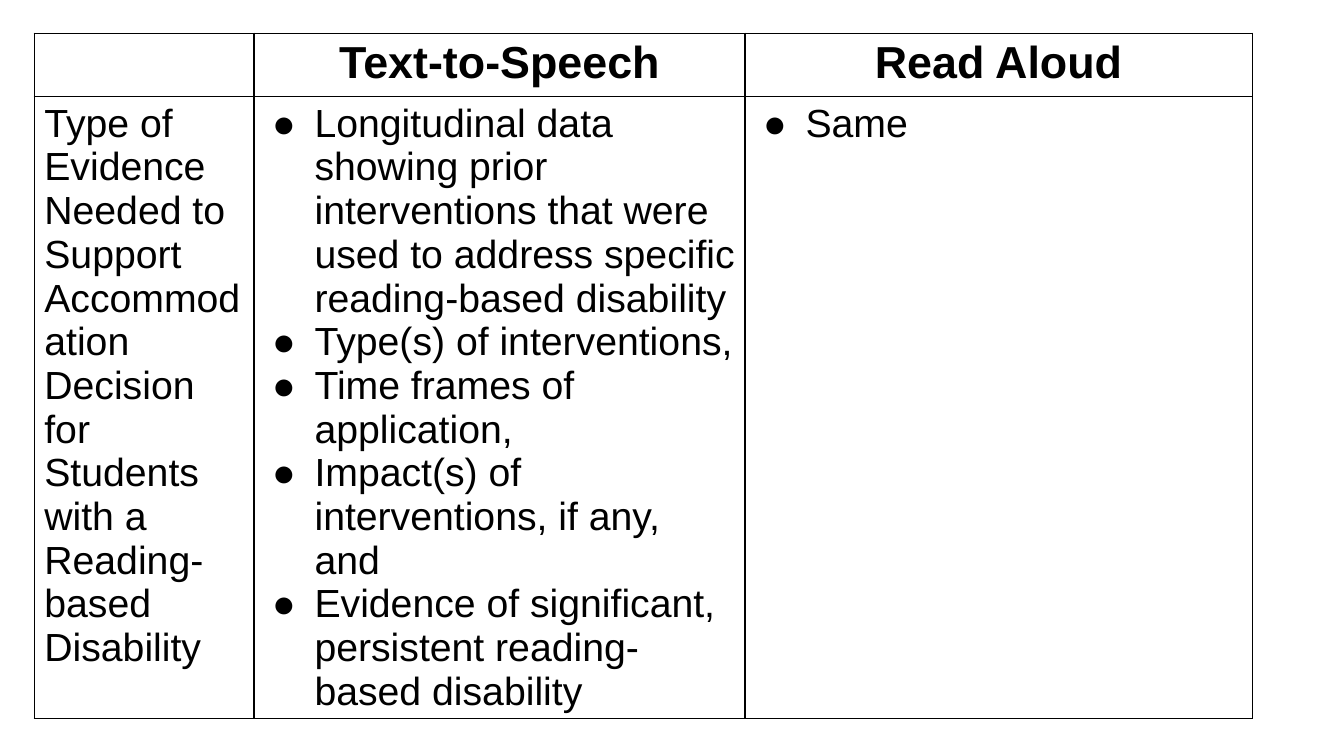
import pptx
import pptx.util
import pptx.dml.color
import pptx.enum.text
import pptx.oxml

NS = 'xmlns:a="http://schemas.openxmlformats.org/drawingml/2006/main"'
INK, PAPER = "000000", "FFFFFF"
Inches, Pt = pptx.util.Inches, pptx.util.Pt


def tint(code):
    return pptx.dml.color.RGBColor.from_string(code)


def add_xml(node, tag, attrs, inner=""):
    node.append(pptx.oxml.parse_xml(f"<a:{tag} {NS} {attrs}>{inner}</a:{tag}>"))


# Content: a header row, then one row of evidence
heads = ["", "Text-to-Speech", "Read Aloud"]
proof = [
    "Type of Evidence Needed to Support Accommodation Decision "
    "for Students with a Reading-based Disability",
    "Longitudinal data showing prior interventions that were used "
    "to address specific reading-based disability\n"
    "Type(s) of interventions,\n"
    "Time frames of application,\n"
    "Impact(s) of interventions, if any, and\n"
    "Evidence of significant, persistent reading-based disability",
    "Same",
]
rows = [heads, proof]
widths = [2.18, 4.87, 5.03]
heights = [0.63, 6.17]

# Slide
deck = pptx.Presentation()
deck.slide_width, deck.slide_height = Inches(13.33), Inches(7.5)
slide = deck.slides.add_slide(deck.slide_layouts[6])

# Table grid
frame = slide.shapes.add_table(
    len(rows), len(widths), Inches(0.34), Inches(0.33),
    Inches(sum(widths)), Inches(sum(heights)))
table = frame.table
table.first_row = table.horz_banding = False
for col, width in zip(table.columns, widths):
    col.width = Inches(width)
for row, height in zip(table.rows, heights):
    row.height = Inches(height)

# Cells
solid = f'<a:solidFill><a:srgbClr val="{INK}"/></a:solidFill>'
for r, texts in enumerate(rows):
    for c, text in enumerate(texts):
        cell = table.cell(r, c)
        cell.text_frame.text = text
        cell.margin_left = cell.margin_right = Inches(0.1)
        cell.margin_top = cell.margin_bottom = Inches(0.05)

        # Borders, then fill
        for side in "LRTB":
            add_xml(cell._tc.get_or_add_tcPr(), "ln" + side,
                    f'w="{Pt(1)}"', solid)
        cell.fill.solid()
        cell.fill.fore_color.rgb = tint(PAPER)

        for para in cell.text_frame.paragraphs:
            # Centred headers, bulleted evidence
            if r == 0:
                para.alignment = pptx.enum.text.PP_ALIGN.CENTER
            elif c > 0:
                props = para._p.get_or_add_pPr()
                props.set("marL", str(Inches(0.5)))
                props.set("indent", str(Inches(-0.42)))
                add_xml(props, "buClr", "", f'<a:srgbClr val="{INK}"/>')
                add_xml(props, "buFont", 'typeface="Arial"')
                add_xml(props, "buChar", 'char="●"')
            for run in para.runs:
                run.font.name = "Arial"
                run.font.size = Pt(32 if r == 0 else 28)
                run.font.bold = r == 0
                run.font.color.rgb = tint(INK)

deck.save("out.pptx")
